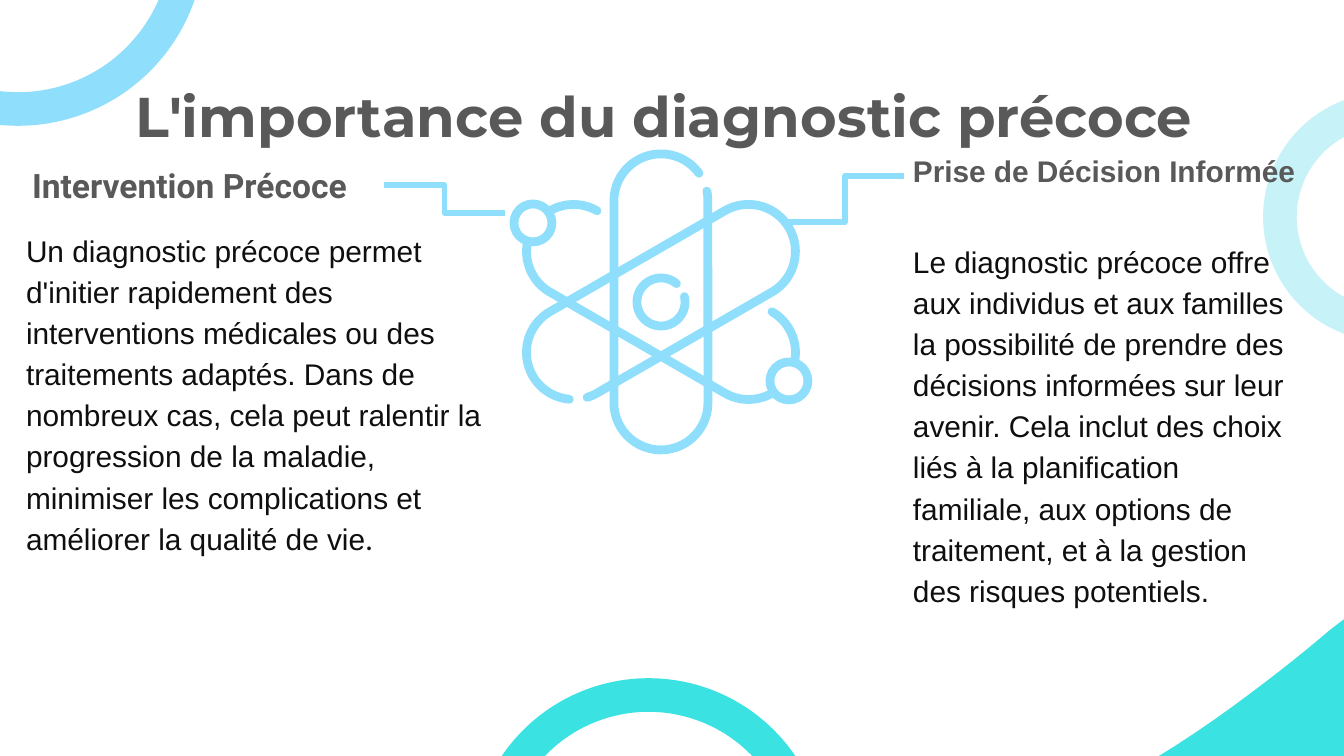
from math import cos, hypot, radians, sin

from lxml.etree import SubElement
from pptx import Presentation
from pptx.dml.color import RGBColor
from pptx.enum.shapes import MSO_CONNECTOR as Link, MSO_SHAPE as Shape
from pptx.enum.text import MSO_ANCHOR as Anchor, PP_ALIGN as Align
from pptx.oxml.ns import qn
from pptx.util import Pt

PX = 914400 / 134.4
WIDTH, HEIGHT = 1344, 756
SKY, TEAL, MIST = "8FDFFC", "3AE2E2", "C7F2F7"
WHITE, GREY, INK = "FFFFFF", "595959", "0F0F0F"
INSET = 13
ATOM_STROKE = 4.7


def emu(px):
    return round(px * PX)


def paint(color_format, color):
    color_format.rgb = RGBColor.from_string(color)


def set_line(line, color, width):
    line.fill.solid()
    paint(line.color, color)
    line.width = Pt(width)


def add_ring(shapes, x, y, size, color, width, fill=None):
    ring = shapes.add_shape(Shape.OVAL, *map(emu, (x, y, size, size)))
    ring.shadow.inherit = False
    ring.fill.background()
    if fill:
        ring.fill.solid()
        paint(ring.fill.fore_color, fill)
    set_line(ring.line, color, width)


def add_outline(shapes, points, close=False):
    first, *rest = [(emu(x), emu(y)) for x, y in points]
    builder = shapes.build_freeform(*first)
    builder.add_line_segments(rest, close=close)
    outline = builder.convert_to_shape()
    outline.shadow.inherit = False
    return outline


def add_stroke(shapes, points):
    """Draw an open line with round ends."""
    stroke = add_outline(shapes, points)
    stroke.fill.background()
    set_line(stroke.line, SKY, ATOM_STROKE)
    stroke.line._get_or_add_ln().set("cap", "rnd")


def bezier(start, control_1, control_2, end, steps=16):
    """Points along a cubic curve, without its start."""
    points = []
    for step in range(1, steps + 1):
        t = step / steps
        weights = ((1 - t) ** 3, 3 * t * (1 - t) ** 2, 3 * t * t * (1 - t), t ** 3)
        corners = (start, control_1, control_2, end)
        points.append(tuple(sum(w * c[axis] for w, c in zip(weights, corners))
                            for axis in (0, 1)))
    return points


def add_wave(page, x, y, width, height):
    points = [(x + width, y + height), (x + width, y + 18)]
    curves = [
        ((484, 18), (453, 0), (404, 0)),
        ((360, 0), (301, 14), (235, 72)),
        ((235, 72), (87, 197), (0, height)),
    ]
    for curve in curves:
        points += bezier(points[-1], *((x + dx, y + dy) for dx, dy in curve))
    wave = add_outline(page.shapes, points, close=True)
    wave.fill.solid()
    paint(wave.fill.fore_color, TEAL)
    wave.line.fill.background()


def add_background(page):
    add_wave(page, 1082, 569, 484, 225)
    for x, y, size, color in [(488, 695, 321, TEAL), (1280, 109, 216, MIST),
                              (-152, -231, 340, SKY)]:
        add_ring(page.shapes, x, y, size, color, 18)


def orbit(center_x, center_y, radius, reach, turn, gap_start, gap_end):
    """Points of a turned oval with straight sides, open between two angles."""
    points = []
    angles = [*range(gap_end, gap_start + 360, 3), gap_start + 360]
    for angle in map(radians, angles):
        x = radius * cos(angle)
        y = radius * sin(angle) + (reach if sin(angle) >= 0 else -reach)
        tilt = radians(turn)
        points.append((center_x + x * cos(tilt) - y * sin(tilt),
                       center_y + x * sin(tilt) + y * cos(tilt)))
    return points


def add_atom(page, x, y, width, height):
    group = page.shapes.add_group_shape()
    center_x, center_y = x + width / 2, y + height / 2
    loops = [
        (47, 101, 0, -36, -12),
        (47, 101, -60, 0, 0),
        (47, 101, 240, -167, -145),
        (24, 0, 0, -50, -13),
    ]
    for loop in loops:
        add_stroke(group.shapes, orbit(center_x, center_y, *loop))
    radius = 19
    for side in (-1, 1):
        add_ring(group.shapes, center_x + side * 128 - radius,
                 center_y + side * 79 - radius, 2 * radius, SKY, ATOM_STROKE, WHITE)


def add_elbow(page, *ends):
    elbow = page.shapes.add_connector(Link.ELBOW, *map(emu, ends))
    set_line(elbow.line, SKY, 3)
    SubElement(elbow._element.spPr, qn("a:effectLst"))


def add_text(page, box, spans, size, color, bold=False, align=Align.LEFT, spacing=1.15):
    """Place one paragraph made of (text, font) spans."""
    frame = page.shapes.add_textbox(*map(emu, box)).text_frame
    frame.word_wrap = True
    frame.vertical_anchor = Anchor.TOP
    frame.margin_left = frame.margin_right = emu(INSET)
    frame.margin_top = frame.margin_bottom = emu(INSET)
    para = frame.paragraphs[0]
    para.alignment = align
    para.line_spacing = spacing
    for text, font in spans:
        span = para.add_run()
        span.text = text
        span.font.name = font
        span.font.size = Pt(size)
        span.font.bold = bold
        paint(span.font.color, color)


def add_topic(page, heading_box, heading, heading_font, heading_size, body_box, body):
    add_text(page, body_box, body, 16, INK)
    add_text(page, heading_box, [(heading, heading_font)], heading_size, GREY, bold=True)


def build_slide(deck):
    page = deck.slides.add_slide(deck.slide_layouts[6])
    add_background(page)
    add_text(page, (101, 69, 1142, 85),
             [("L'importance du diagnostic précoce ", "Montserrat")],
             30, GREY, bold=True, align=Align.CENTER, spacing=1.0)
    add_atom(page, 509, 150, 304, 304)
    add_elbow(page, 904, 176, 786, 222)
    add_elbow(page, 384, 185, 505, 213)
    add_topic(page, (19, 146, 446, 60), "Intervention Précoce", "Roboto", 18,
              (13, 214, 493, 153), [
                  ("Un diagnostic précoce permet d'initier rapidement des interventions "
                   "médicales ou des traitements adaptés. Dans de nombreux cas, cela peut "
                   "ralentir la progression de la maladie, minimiser les complications et "
                   "améliorer la qualité de vie", "Arial"),
                  (".", "Lato")])
    add_topic(page, (900, 134, 449, 60), "Prise de Décision Informée", "Arial", 16,
              (900, 225, 401, 153), [
                  ("Le diagnostic précoce offre aux individus et aux familles la "
                   "possibilité de prendre des décisions informées sur leur avenir. Cela "
                   "inclut des choix liés à la planification familiale, aux options de "
                   "traitement, et à la gestion des risques potentiels.", "Arial")])


def main():
    deck = Presentation()
    deck.slide_width, deck.slide_height = emu(WIDTH), emu(HEIGHT)
    build_slide(deck)
    deck.save("out.pptx")


if __name__ == "__main__":
    main()
